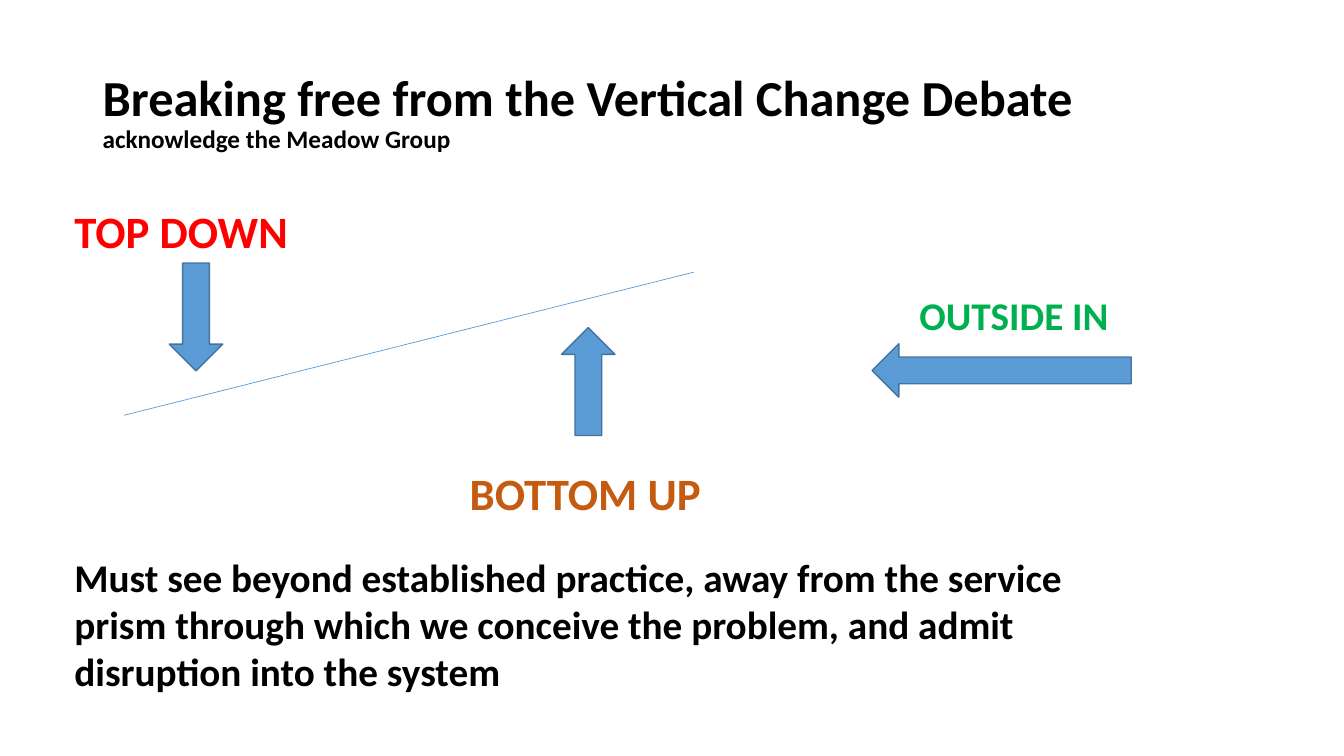
from dataclasses import dataclass

from lxml import etree
from pptx import Presentation, util as u
from pptx.dml.color import RGBColor
from pptx.enum import shapes, text
from pptx.oxml.ns import qn

PX = 9144  # EMU per px, 100 px to the inch
FONT = "Calibri"
HUES = {
    "ink": "000000",
    "red": "FF0000",
    "green": "00B050",
    "rust": "C55A11",
    "blue": "5B9BD5",
    "edge": "43739E",
}
DOWN = shapes.MSO_SHAPE.DOWN_ARROW
LEFT = shapes.MSO_SHAPE.LEFT_ARROW
TOP = text.MSO_ANCHOR.TOP
MID = text.MSO_ANCHOR.MIDDLE

Box = tuple[int, int, int, int]


@dataclass
class Label:
    box: Box
    lines: list[tuple[str, int]]  # wording and size in points
    hue: str
    anchor: text.MSO_ANCHOR = TOP
    pitch: float = 1.0


@dataclass
class Arrow:
    box: Box
    kind: shapes.MSO_SHAPE
    turn: int = 0


LABELS = [
    Label((92, 40, 1150, 145),
          [("Breaking free from the Vertical Change Debate", 36),
           ("acknowledge the Meadow Group", 18)], "ink", MID, 0.9),
    Label((64, 203, 1177, 341), [("TOP DOWN", 32)], "red", pitch=0.9),
    Label((902, 284, 322, 57), [("OUTSIDE IN", 28)], "green"),
    Label((456, 457, 349, 64), [("BOTTOM UP", 32)], "rust"),
    Label((64, 544, 1021, 151),
          [("Must see beyond established practice, away from the service "
            "prism through which we conceive the problem, and admit "
            "disruption into the system", 28)], "ink"),
]
ARROWS = [
    Arrow((168, 261, 53, 107), DOWN),
    Arrow((557, 325, 53, 107), DOWN, 180),
    Arrow((865, 341, 257, 53), LEFT),
]
SEESAW = (123, 412, 688, 270)  # from x, y to x, y


def scale(box: Box) -> list[int]:
    return [n * PX for n in box]


def tint(hue: str) -> RGBColor:
    return RGBColor.from_string(HUES[hue])


def add_label(slide, label: Label) -> None:
    frame = slide.shapes.add_textbox(*scale(label.box)).text_frame
    frame.word_wrap = True
    frame.vertical_anchor = label.anchor
    para = frame.paragraphs[0]
    para.line_spacing = label.pitch
    for i, (words, size) in enumerate(label.lines):
        if i:
            para.add_line_break()
        run = para.add_run()
        run.text = words
        run.font.name = FONT
        run.font.size = u.Pt(size)
        run.font.bold = True
        run.font.color.rgb = tint(label.hue)


def add_arrow(slide, arrow: Arrow) -> None:
    shape = slide.shapes.add_shape(arrow.kind, *scale(arrow.box))
    shape.shadow.inherit = False
    shape.rotation = arrow.turn
    shape.fill.solid()
    shape.fill.fore_color.rgb = tint("blue")
    shape.line.color.rgb = tint("edge")
    shape.line.width = u.Pt(1)


def add_seesaw(slide) -> None:
    beam = slide.shapes.add_connector(
        shapes.MSO_CONNECTOR.STRAIGHT, *scale(SEESAW))
    beam.line.color.rgb = tint("blue")
    beam.line.width = u.Pt(0.5)
    etree.SubElement(beam._element.spPr, qn("a:effectLst"))


def main() -> None:
    deck = Presentation()
    deck.slide_width, deck.slide_height = 1333 * PX, 750 * PX
    slide = deck.slides.add_slide(deck.slide_layouts[6])
    add_seesaw(slide)
    for arrow in ARROWS:
        add_arrow(slide, arrow)
    for label in LABELS:
        add_label(slide, label)
    deck.save("out.pptx")


if __name__ == "__main__":
    main()
